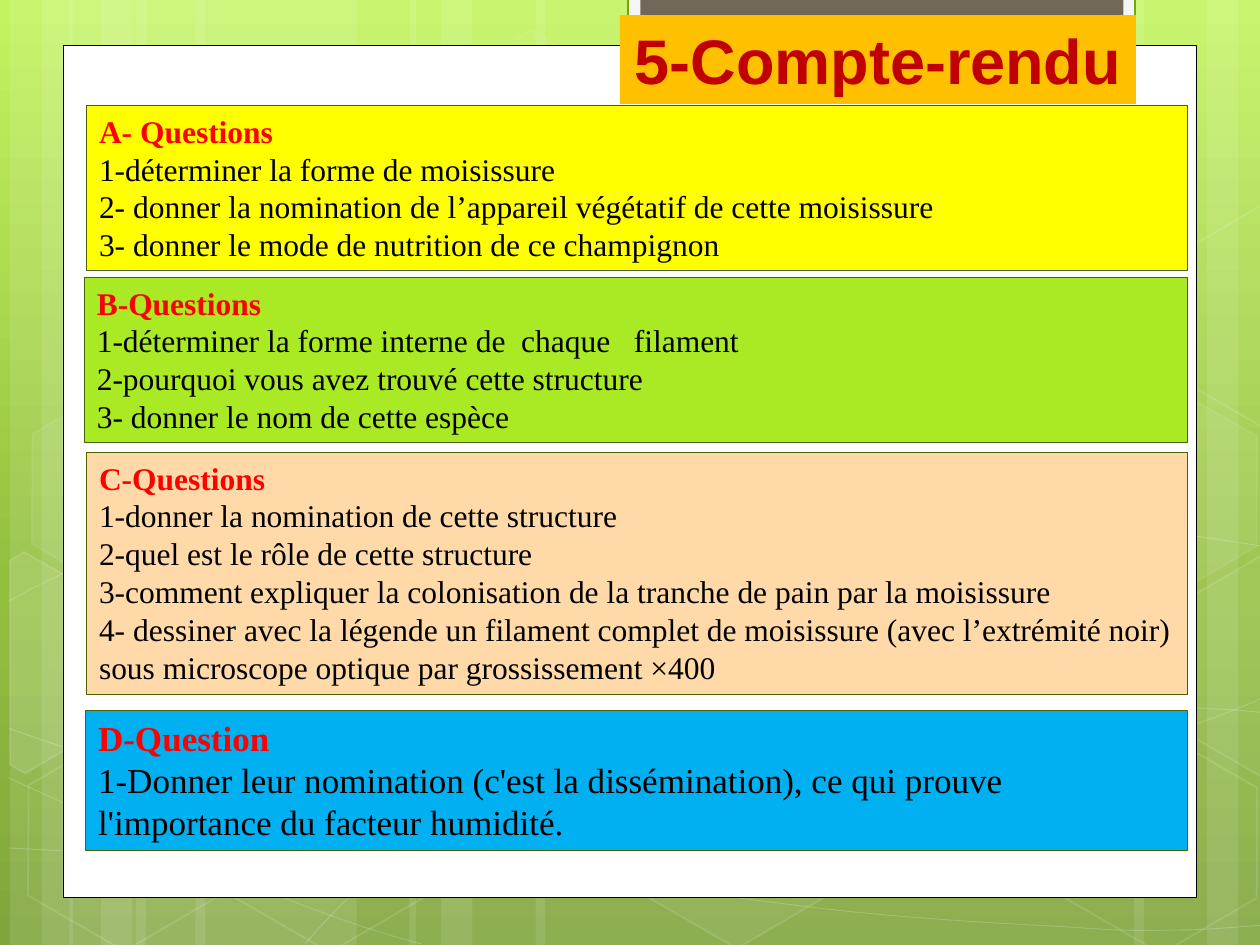
from copy import deepcopy
from typing import NamedTuple, Optional

from lxml import etree
from pptx import Presentation
from pptx.dml.color import RGBColor
from pptx.enum.shapes import MSO_SHAPE
from pptx.enum.text import MSO_ANCHOR, MSO_AUTO_SIZE, PP_ALIGN
from pptx.oxml.ns import qn
from pptx.util import Inches, Pt

RECTANGLE, HEXAGON = MSO_SHAPE.RECTANGLE, MSO_SHAPE.HEXAGON
TOP, NO_FIT = MSO_ANCHOR.TOP, MSO_AUTO_SIZE.NONE
LEFT, CENTER = PP_ALIGN.LEFT, PP_ALIGN.CENTER
COLUMNS, ROWS = 100, 75
CELL = Inches(0.1)
COMPARISON_LAYOUT = 4
WHITE = "FFFFFF"


class Area(NamedTuple):
    left: float
    top: float
    width: float
    height: float


class Look(NamedTuple):
    fill: Optional[str] = None
    fill_alpha: int = 100
    line: Optional[str] = None
    line_width: float = 1
    line_alpha: int = 100


class Hexagon(NamedTuple):
    left: float
    top: float
    fill_alpha: int
    line_alpha: int


class CutHexagon(NamedTuple):
    corners: tuple
    fill_alpha: int


class Questions(NamedTuple):
    area: Area
    colour: str
    size: int
    heading: str
    items: tuple


BACKGROUND_STOPS = ((0, "C3F35F"), (62, "93BF3F"), (100, "81A53E"))

STRIPES = (
    (10.8, 17.5), (0.8, 5), (3.3, 8.3), (15.5, 17.5), (5.5, 5), (8, 8.3),
    (73.3, 17.5), (95.8, 5), (90, 8.3), (42.5, 30.8), (32.5, 5), (35, 8.3),
)

CURVES = (
    ((0.7, 67.3), (6.1, 67.6), (11.5, 67.9), (19, 67.8), (26.5, 67.7), (35.8, 67.5), (45.8, 66.5),
     (55.8, 65.5), (70, 63.6), (79.2, 61.7), (88.3, 59.8), (97.7, 56.8), (100.7, 55.1)),
    ((0.7, 47.7), (3.6, 46.1), (6.5, 44.6), (12.1, 43.1), (17.8, 41.6), (25.9, 39.4), (34.7, 38.7),
     (43.6, 38), (54.4, 37.9), (65.4, 38.7), (76.4, 39.5), (94.7, 42.6), (100.7, 43.4)),
    ((0.6, 61.7), (12.7, 67.2), (24.7, 72.7), (33.4, 74.9)),
    ((0.7, 57.8), (3.8, 58.9), (7, 60), (12.8, 61.6), (18.6, 63.1), (27.3, 65.6), (35.7, 67.3),
     (44, 69), (54.5, 70.8), (62.8, 71.8), (71.1, 72.9), (80, 73.3), (85.3, 73.6),
     (90.5, 74), (91.9, 73.8), (94.5, 73.8), (97.1, 73.7), (98.9, 73.5), (100.7, 73.4)),
    ((24.2, 74.9), (26, 72.9), (27.8, 70.9), (30.2, 69.1), (32.6, 67.3), (36, 65.3), (38.8, 63.9),
     (41.6, 62.5), (43.3, 61.9), (47, 60.9), (50.6, 59.9), (57.3, 58.5), (60.8, 57.8),
     (64.4, 57.1), (64.9, 57.1), (68, 56.9), (71.1, 56.6), (76, 56.3), (79.4, 56.2),
     (82.9, 56.1), (88.6, 56.2), (88.6, 56.2), (90.8, 56.2), (93.1, 56.2), (95.3, 56.2),
     (97.1, 56.3), (98.8, 56.4), (99.7, 56.5), (100.6, 56.6), (100.3, 56.5), (100.6, 56.6)),
)

HEXAGONS = (
    Hexagon(33.4, 3.6, 4, 8), Hexagon(49.7, 58.9, 6, 12), Hexagon(1.1, 59.1, 0, 12),
    Hexagon(1.4, 31.2, 7, 8), Hexagon(17.4, 59.2, 0, 12), Hexagon(75.3, 45.3, 10, 12),
    Hexagon(83.4, 59.3, 0, 12), Hexagon(83.4, 31.4, 7, 8),
)

CUT_HEXAGONS = (
    CutHexagon(((0.8, 44.5), (1.9, 43.8), (9.6, 48.2), (9.5, 57), (2, 61.4), (0.8, 60.7)), 10),
    CutHexagon(((92.6, 48.5), (100.1, 44.1), (100.9, 44.6), (100.9, 61.3), (100.2, 61.7), (92.6, 57.3)), 4),
    CutHexagon(((92.6, 20.7), (100.1, 16.3), (101, 16.8), (100.9, 33.5), (100.2, 33.9), (92.6, 29.5)), 0),
)

PANELS = (
    (Area(5, 3.6, 90, 67.65), Look(WHITE, line="000000", line_width=0.5)),
    (Area(49.87, -0.2, 40.2, 7.6), Look("F5F5F5", line="74A510", line_width=1.25)),
    (Area(50.83, -0.2, 38.33, 6.8), Look("71685A")),
)

QUESTION_BLOCKS = (
    Questions(Area(6.86, 8.37, 87.4, 13.1), "FFFF00", 18, "A- Questions", (
        "1-déterminer la forme de moisissure",
        "2- donner la nomination de l’appareil végétatif de cette moisissure",
        "3- donner le mode de nutrition de ce champignon")),
    Questions(Area(6.68, 22, 87.55, 13.1), "AAEA25", 18, "B-Questions", (
        "1-déterminer la forme interne de  chaque   filament",
        "2-pourquoi vous avez trouvé cette structure",
        "3- donner le nom de cette espèce")),
    Questions(Area(6.86, 35.9, 87.4, 19.2), "FFD9A7", 18, "C-Questions", (
        "1-donner la nomination de cette structure",
        "2-quel est le rôle de cette structure",
        "3-comment expliquer la colonisation de la tranche de pain par la moisissure",
        "4- dessiner avec la légende un filament complet de moisissure (avec l’extrémité noir) "
        "sous microscope optique par grossissement ×400")),
    Questions(Area(6.78, 56.38, 87.45, 11.1), "00B0F0", 20, "D-Question", (
        "1-Donner leur nomination (c'est la dissémination), ce qui prouve "
        "l'importance du facteur humidité.",)),
)


def colour(code: str) -> RGBColor:
    return RGBColor.from_string(code)


def cells(*lengths: float) -> list:
    return [round(length * CELL) for length in lengths]


def apply(target, values: dict) -> None:
    for attribute, value in values.items():
        setattr(target, attribute, value)


def paint(fill, code: Optional[str], alpha: int) -> None:
    if code is None or alpha == 0:
        fill.background()
        return
    fill.solid()
    fill.fore_color.rgb = colour(code)
    if alpha < 100:
        tint = fill._xPr.find(qn("a:solidFill"))[0]
        etree.SubElement(tint, qn("a:alpha")).set("val", str(alpha * 1000))


def dress(shape, look: Look) -> None:
    paint(shape.fill, look.fill, look.fill_alpha)
    paint(shape.line.fill, look.line, look.line_alpha)
    if look.line:
        shape.line.width = Pt(look.line_width)


def add_preset(slide, preset, area: Area, look: Look):
    shape = slide.shapes.add_shape(preset, *cells(*area))
    shape.shadow.inherit = False
    dress(shape, look)
    return shape


def add_outline(slide, points: tuple, look: Look, close: bool):
    start, *rest = [cells(*point) for point in points]
    builder = slide.shapes.build_freeform(*start, scale=1.0)
    builder.add_line_segments(rest, close=close)
    shape = builder.convert_to_shape()
    shape.shadow.inherit = False
    dress(shape, look)
    return shape


def add_curve(slide, knots: tuple, look: Look) -> None:
    outline = next(add_outline(slide, knots, look, False)._element.iter(qn("a:path")))
    segments = outline.findall(qn("a:lnTo"))
    for first in range(0, len(segments), 3):
        bend = etree.SubElement(outline, qn("a:cubicBezTo"))
        for segment in segments[first:first + 3]:
            bend.append(segment[0])
            outline.remove(segment)


def set_background(slide) -> None:
    fill = slide.background.fill
    fill.gradient()
    fill.gradient_angle = 270
    stop_list = fill._fill._gradFill.find(qn("a:gsLst"))
    stop_list.append(deepcopy(stop_list[0]))
    for stop, (position, code) in zip(fill.gradient_stops, BACKGROUND_STOPS):
        stop.position = position / 100
        stop.color.rgb = colour(code)


def write_placeholder(slide, holder, area: Area, look: Look, lines, align, font: dict, wrap: bool) -> None:
    apply(holder, dict(zip(("left", "top", "width", "height"), cells(*area))))
    dress(holder, look)
    slide.shapes._spTree.append(holder._element)
    frame = holder.text_frame
    apply(frame, {"word_wrap": wrap, "auto_size": NO_FIT, "vertical_anchor": TOP})
    for index, (text, code, bold) in enumerate(lines):
        paragraph = frame.add_paragraph() if index else frame.paragraphs[0]
        properties = paragraph._p.get_or_add_pPr()
        apply(paragraph, {"alignment": align, "space_before": Pt(0)})
        for indent in ("marL", "indent"):
            properties.set(indent, "0")
        etree.SubElement(properties, qn("a:buNone"))
        run = paragraph.add_run()
        run.text = text
        apply(run.font, {**font, "bold": bold})
        run.font.color.rgb = colour(code)


def main() -> None:
    deck = Presentation()
    apply(deck, {"slide_width": COLUMNS * CELL, "slide_height": ROWS * CELL})
    slide = deck.slides.add_slide(deck.slide_layouts[COMPARISON_LAYOUT])
    title, *bodies = slide.placeholders
    set_background(slide)
    for left, width in STRIPES:
        add_preset(slide, RECTANGLE, Area(left, 0, width, ROWS), Look(WHITE, 10))
    for curve in CURVES:
        add_curve(slide, curve, Look(line=WHITE, line_width=0.5, line_alpha=20))
    for left, top, fill_alpha, line_alpha in HEXAGONS:
        cell = add_preset(slide, HEXAGON, Area(left, top, 17.5, 15.2),
                          Look(WHITE, fill_alpha, WHITE, 1, line_alpha))
        cell.rotation = 30
        cell.adjustments[0] = 0.285
    for corners, fill_alpha in CUT_HEXAGONS:
        add_outline(slide, corners, Look(WHITE, fill_alpha, WHITE, 1, 12), True)
    for area, look in PANELS:
        add_preset(slide, RECTANGLE, area, look)
    for body, block in zip(bodies, QUESTION_BLOCKS):
        lines = [(block.heading, "FF0000", True)] + [(item, "000000", False) for item in block.items]
        write_placeholder(slide, body, block.area, Look(block.colour, line="4A6300", line_width=0.75),
                          lines, LEFT, {"name": "Times New Roman", "size": Pt(block.size)}, True)
    write_placeholder(slide, title, Area(49.2, 1.2, 40.95, 7.05), Look("FFC000"),
                      [("5-Compte-rendu", "C00000", True)], CENTER,
                      {"name": "Arial", "size": Pt(36)}, False)
    deck.save("out.pptx")


if __name__ == "__main__":
    main()
